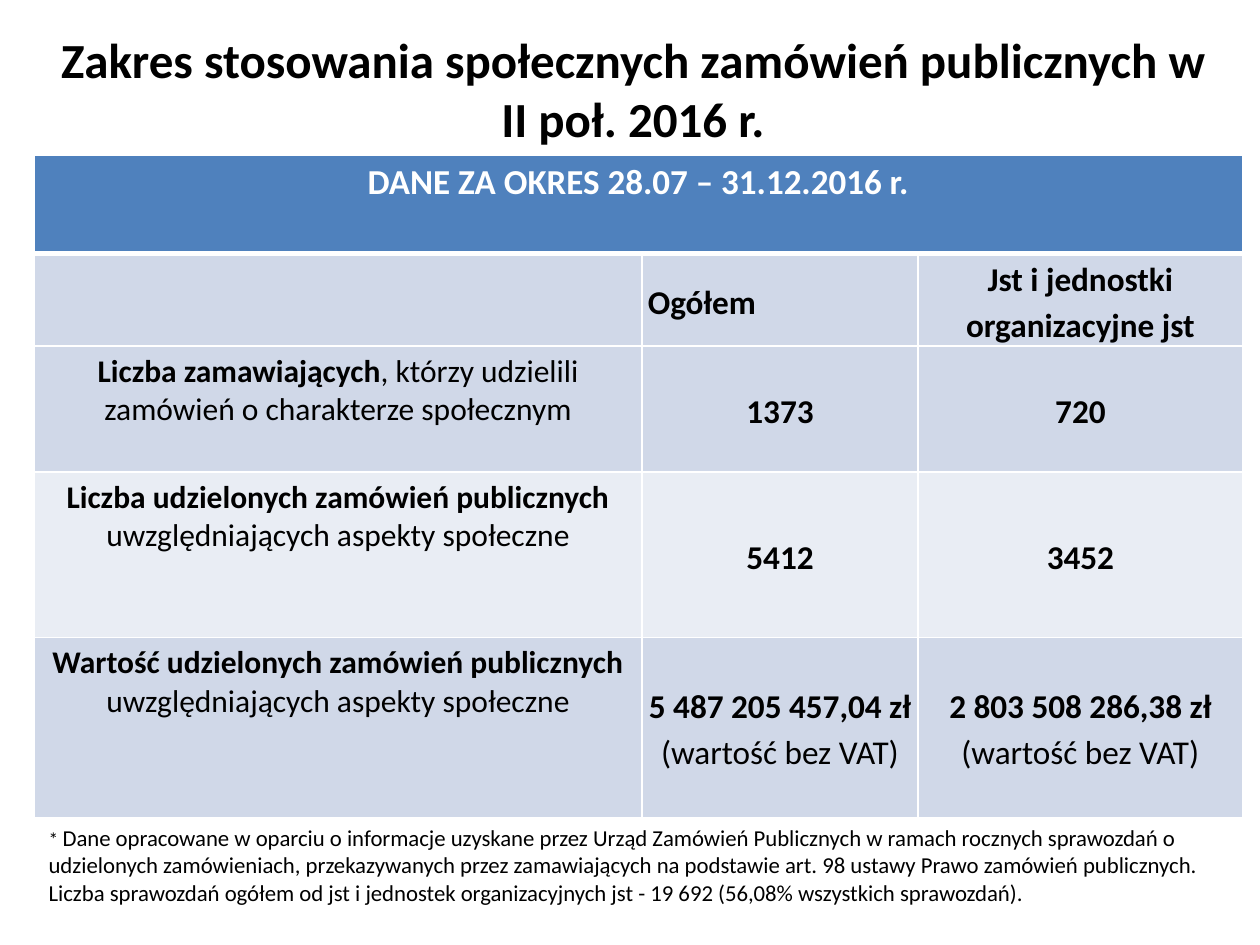
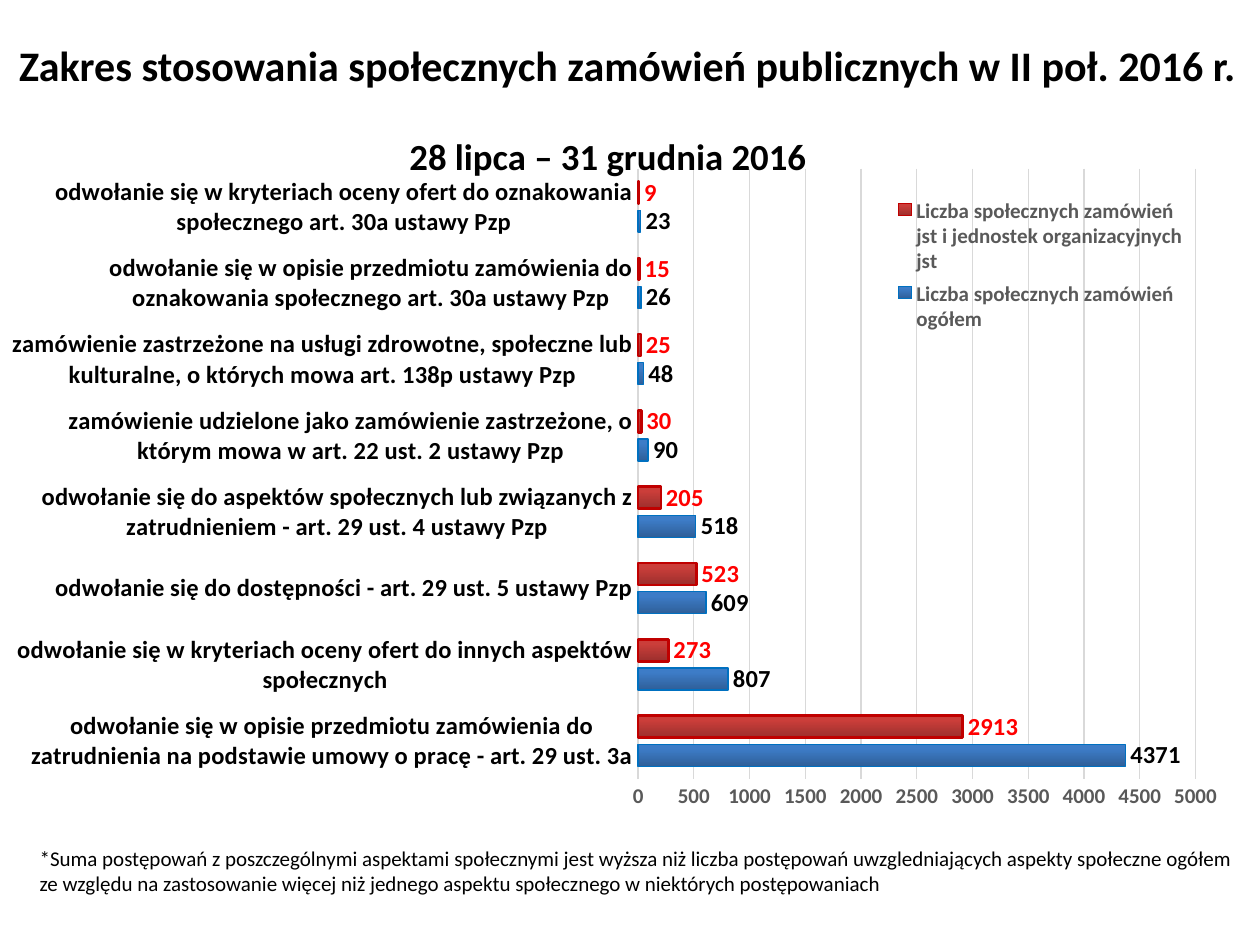
from lxml.etree import SubElement
from pptx import Presentation
from pptx.chart.data import CategoryChartData
from pptx.dml.color import RGBColor
from pptx.enum.chart import XL_CHART_TYPE as ChartType
from pptx.enum.chart import XL_LABEL_POSITION as LabelPosition
from pptx.enum.chart import XL_LEGEND_POSITION as LegendPosition
from pptx.enum.chart import XL_TICK_MARK as TickMark
from pptx.enum.text import MSO_ANCHOR as Anchor
from pptx.enum.text import MSO_AUTO_SIZE as AutoSize
from pptx.enum.text import PP_ALIGN as Align
from pptx.oxml.ns import qn
from pptx.util import Cm, Pt

BLACK = RGBColor(0x00, 0x00, 0x00)
WHITE = RGBColor(0xFF, 0xFF, 0xFF)
HEADER_BLUE = RGBColor(0x4F, 0x81, 0xBD)
BAND_DARK = RGBColor(0xD0, 0xD8, 0xE8)
BAND_LIGHT = RGBColor(0xE9, 0xED, 0xF4)
GRID_GREY = RGBColor(0xD9, 0xD9, 0xD9)
AXIS_GREY = RGBColor(0x59, 0x59, 0x59)
LABEL_RED = RGBColor(0xFF, 0x00, 0x00)
TOTAL_LINE = RGBColor(0x00, 0x70, 0xC0)
TOTAL_DARK = RGBColor(0x2F, 0x5F, 0x99)
TOTAL_LIGHT = RGBColor(0x3D, 0x7C, 0xC7)
LOCAL_LINE = RGBColor(0xC0, 0x00, 0x00)
LOCAL_DARK = RGBColor(0x9C, 0x2F, 0x2D)
LOCAL_LIGHT = RGBColor(0xCB, 0x3E, 0x3A)

TITLE = "Zakres stosowania społecznych zamówień publicznych w II poł. 2016 r."

COLUMN_WIDTHS = (12.25, 5.57, 6.54)
ROW_HEIGHTS = (1.98, 1.78, 2.54, 3.33, 3.63)
ROW_FILLS = (HEADER_BLUE, BAND_DARK, BAND_DARK, BAND_LIGHT, BAND_DARK)
NET_VALUE = "(wartość bez VAT)"
TABLE_ROWS = (
    (("DANE ZA OKRES 28.07 – 31.12.2016 r.",), (), ()),
    ((), ("Ogółem",), ("Jst i jednostki organizacyjne jst",)),
    (("Liczba zamawiających", ", którzy udzielili zamówień o charakterze społecznym"),
     ("1373",), ("720",)),
    (("Liczba udzielonych zamówień publicznych ", "uwzględniających aspekty społeczne"),
     ("5412",), ("3452",)),
    (("Wartość udzielonych zamówień publicznych ", "uwzględniających aspekty społeczne"),
     ("5 487 205 457,04 zł ", NET_VALUE), ("2 803 508 286,38 zł ", NET_VALUE)),
)
TABLE_NOTE = (
    "Dane opracowane w oparciu o informacje uzyskane przez Urząd Zamówień Publicznych "
    "w ramach rocznych sprawozdań o udzielonych zamówieniach, przekazywanych przez "
    "zamawiających na podstawie art. 98 ustawy Prawo zamówień publicznych. Liczba "
    "sprawozdań ogółem od jst i jednostek organizacyjnych jst - 19 692 (56,08% "
    "wszystkich sprawozdań)."
)

ASPECTS = (
    ("odwołanie się w opisie przedmiotu zamówienia do zatrudnienia na podstawie "
     "umowy o pracę - art. 29 ust. 3a", 4371, 2913),
    ("odwołanie się w kryteriach oceny ofert do innych aspektów społecznych", 807, 273),
    ("odwołanie się do dostępności - art. 29 ust. 5 ustawy Pzp", 609, 523),
    ("odwołanie się do aspektów społecznych lub związanych z zatrudnieniem - "
     "art. 29 ust. 4 ustawy Pzp", 518, 205),
    ("zamówienie udzielone jako zamówienie zastrzeżone, o którym mowa w "
     "art. 22 ust. 2 ustawy Pzp", 90, 30),
    ("zamówienie zastrzeżone na usługi zdrowotne, społeczne lub kulturalne, "
     "o których mowa art. 138p ustawy Pzp", 48, 25),
    ("odwołanie się w opisie przedmiotu zamówienia do oznakowania społecznego "
     "art. 30a ustawy Pzp", 26, 15),
    ("odwołanie się w kryteriach oceny ofert do oznakowania społecznego "
     "art. 30a ustawy Pzp", 23, 9),
)
SERIES_NAMES = (
    "Liczba społecznych zamówień ogółem",
    "Liczba społecznych zamówień jst i jednostek organizacyjnych jst",
)
SERIES_STYLES = (
    (TOTAL_DARK, TOTAL_LIGHT, TOTAL_LINE, 0.75, BLACK),
    (LOCAL_DARK, LOCAL_LIGHT, LOCAL_LINE, 1.5, LABEL_RED),
)
CHART_NOTE = (
    "*Suma postępowań z poszczególnymi aspektami społecznymi jest wyższa niż liczba "
    "postępowań uwzgledniających aspekty społeczne ogółem ze względu na zastosowanie "
    "więcej niż jednego aspektu społecznego w niektórych postępowaniach"
)


class Deck:
    font_name = "Calibri"

    def __init__(self):
        self.presentation = Presentation()
        self.presentation.slide_width = Cm(25.4)
        self.presentation.slide_height = Cm(19.05)
        self.slide = None

    def set_font(self, font, size, color=BLACK, bold=False):
        font.name = self.font_name
        font.size = Pt(size)
        font.color.rgb = color
        font.bold = bold

    def add_slide(self, title, left, top, width, size):
        self.slide = self.presentation.slides.add_slide(self.presentation.slide_layouts[5])
        shape = self.slide.shapes.title
        shape.left, shape.top, shape.width, shape.height = Cm(left), Cm(top), Cm(width), Cm(3.18)
        shape.text_frame.text = title
        shape.text_frame.auto_size = AutoSize.NONE
        shape.text_frame.vertical_anchor = Anchor.MIDDLE
        paragraph = shape.text_frame.paragraphs[0]
        paragraph.alignment = Align.CENTER
        self.set_font(paragraph.font, size, bold=True)

    def add_note(self, parts, left, top, width, height):
        shape = self.slide.shapes.add_textbox(Cm(left), Cm(top), Cm(width), Cm(height))
        shape.text_frame.word_wrap = True
        shape.text_frame.auto_size = AutoSize.SHAPE_TO_FIT_TEXT
        for text, size in parts:
            run = shape.text_frame.paragraphs[0].add_run()
            run.text = text
            self.set_font(run.font, size)

    def add_borders(self, cell, top, bottom):
        properties = cell._tc.get_or_add_tcPr()
        for side, width in (("L", 1), ("R", 1), ("T", top), ("B", bottom)):
            line = SubElement(properties, qn(f"a:ln{side}"), w=str(Pt(width)))
            fill = SubElement(line, qn("a:solidFill"))
            SubElement(fill, qn("a:srgbClr"), val=str(WHITE))

    def fill_cell(self, cell, parts, size, color):
        paragraph = cell.text_frame.paragraphs[0]
        paragraph.alignment = Align.CENTER
        for index, text in enumerate(parts):
            run = paragraph.add_run()
            run.text = text
            self.set_font(run.font, size, color, bold=index == 0)
        return paragraph

    def add_table(self, rows, left, top):
        frame = self.slide.shapes.add_table(
            len(rows), len(COLUMN_WIDTHS), Cm(left), Cm(top),
            Cm(sum(COLUMN_WIDTHS)), Cm(sum(ROW_HEIGHTS)))
        table = frame.table
        for column, width in zip(table.columns, COLUMN_WIDTHS):
            column.width = Cm(width)
        for row, height in zip(table.rows, ROW_HEIGHTS):
            row.height = Cm(height)
        for row_index, row in enumerate(rows):
            for column_index, parts in enumerate(row):
                cell = table.cell(row_index, column_index)
                self.add_borders(cell, 3 if row_index == 1 else 1, 3 if row_index == 0 else 1)
                cell.fill.solid()
                cell.fill.fore_color.rgb = ROW_FILLS[row_index]
                if row_index == 0:
                    self.fill_cell(cell, parts, 20, WHITE)
                elif column_index == 0:
                    self.fill_cell(cell, parts, 18, BLACK)
                else:
                    cell.vertical_anchor = Anchor.MIDDLE
                    cell.margin_left = cell.margin_right = Cm(0.12)
                    cell.margin_top = cell.margin_bottom = 0
                    self.fill_cell(cell, parts, 19, BLACK).line_spacing = 1.15
        total_heading = table.cell(1, 1).text_frame.paragraphs[0]
        total_heading.alignment = Align.LEFT
        table.cell(0, 0).merge(table.cell(0, len(COLUMN_WIDTHS) - 1))

    def place_in_chart(self, chart, tag, **values):
        element = chart._chartSpace.find(f".//{qn(tag)}")
        for layout in element.findall(qn("c:layout")):
            element.remove(layout)
        layout = SubElement(element, qn("c:layout"))
        manual = SubElement(layout, qn("c:manualLayout"))
        if tag == "c:plotArea":
            SubElement(manual, qn("c:layoutTarget"), val="inner")
            element.insert(0, layout)
        else:
            element.find(qn("c:overlay")).addprevious(layout)
        for name in ("x", "y"):
            SubElement(manual, qn(f"c:{name}Mode"), val="edge")
        for name, value in values.items():
            SubElement(manual, qn(f"c:{name}"), val=str(value))

    def style_series(self, series, dark, light, line, width, label_color):
        fill = series.format.fill
        fill.gradient()
        fill.gradient_angle = 90
        for stop, color, position in zip(fill.gradient_stops, (dark, light), (0, 0.8)):
            stop.color.rgb = color
            stop.position = position
        series.format.line.color.rgb = line
        series.format.line.width = Pt(width)
        series.invert_if_negative = False
        labels = series.data_labels
        labels.show_value = True
        labels.position = LabelPosition.OUTSIDE_END
        self.set_font(labels.font, 14, label_color, bold=True)

    def style_axes(self, chart):
        category_axis, value_axis = chart.category_axis, chart.value_axis
        for axis in (category_axis, value_axis):
            axis.major_tick_mark = axis.minor_tick_mark = TickMark.NONE
        self.set_font(category_axis.tick_labels.font, 14, bold=True)
        category_axis.format.line.color.rgb = GRID_GREY
        category_axis.format.line.width = Pt(1)
        self.set_font(value_axis.tick_labels.font, 12, AXIS_GREY, bold=True)
        value_axis.format.line.fill.background()
        value_axis.minimum_scale, value_axis.maximum_scale = 0, 5000
        value_axis.major_unit = 500
        value_axis.major_gridlines.format.line.color.rgb = GRID_GREY
        value_axis.major_gridlines.format.line.width = Pt(0.75)

    def add_bar_chart(self, title, left, top, width, height):
        categories, *columns = zip(*ASPECTS)
        data = CategoryChartData(number_format="General")
        data.categories = categories
        for name, values in zip(SERIES_NAMES, columns):
            data.add_series(name, values)
        chart = self.slide.shapes.add_chart(
            ChartType.BAR_CLUSTERED, Cm(left), Cm(top), Cm(width), Cm(height), data).chart
        self.set_font(chart.font, 10, bold=True)

        chart.has_title = True
        chart.chart_title.include_in_layout = False
        chart.chart_title.text_frame.text = title
        self.set_font(chart.chart_title.text_frame.paragraphs[0].font, 21, bold=True)

        chart.has_legend = True
        chart.legend.position = LegendPosition.RIGHT
        chart.legend.include_in_layout = False
        self.set_font(chart.legend.font, 12, AXIS_GREY, bold=True)

        plot = chart.plots[0]
        plot.gap_width, plot.overlap = 118, -31
        plot.vary_by_categories = False
        for series, style in zip(plot.series, SERIES_STYLES):
            self.style_series(series, *style)
        self.style_axes(chart)
        self.place_in_chart(chart, "c:title", x=0.32, y=0.01)
        self.place_in_chart(chart, "c:legend", x=0.72, y=0.1, w=0.23, h=0.2)
        self.place_in_chart(chart, "c:plotArea", x=0.51, y=0.07, w=0.45, h=0.82)


def main():
    deck = Deck()
    deck.add_slide(TITLE, 0.66, 0.2, 24.2, 28)
    deck.add_table(TABLE_ROWS, 0.69, 3.13)
    deck.add_note((("* ", 11), (TABLE_NOTE, 13)), 0.73, 16.48, 24.54, 2.48)

    deck.add_slide(TITLE, -0.1, -0.28, 25.5, 24)
    deck.add_bar_chart("28 lipca – 31 grudnia 2016", 0.13, 2.35, 24.97, 15.01)
    deck.add_note(((CHART_NOTE, 12),), 0.55, 16.92, 24.85, 1.28)
    deck.presentation.save("out.pptx")


if __name__ == "__main__":
    main()
